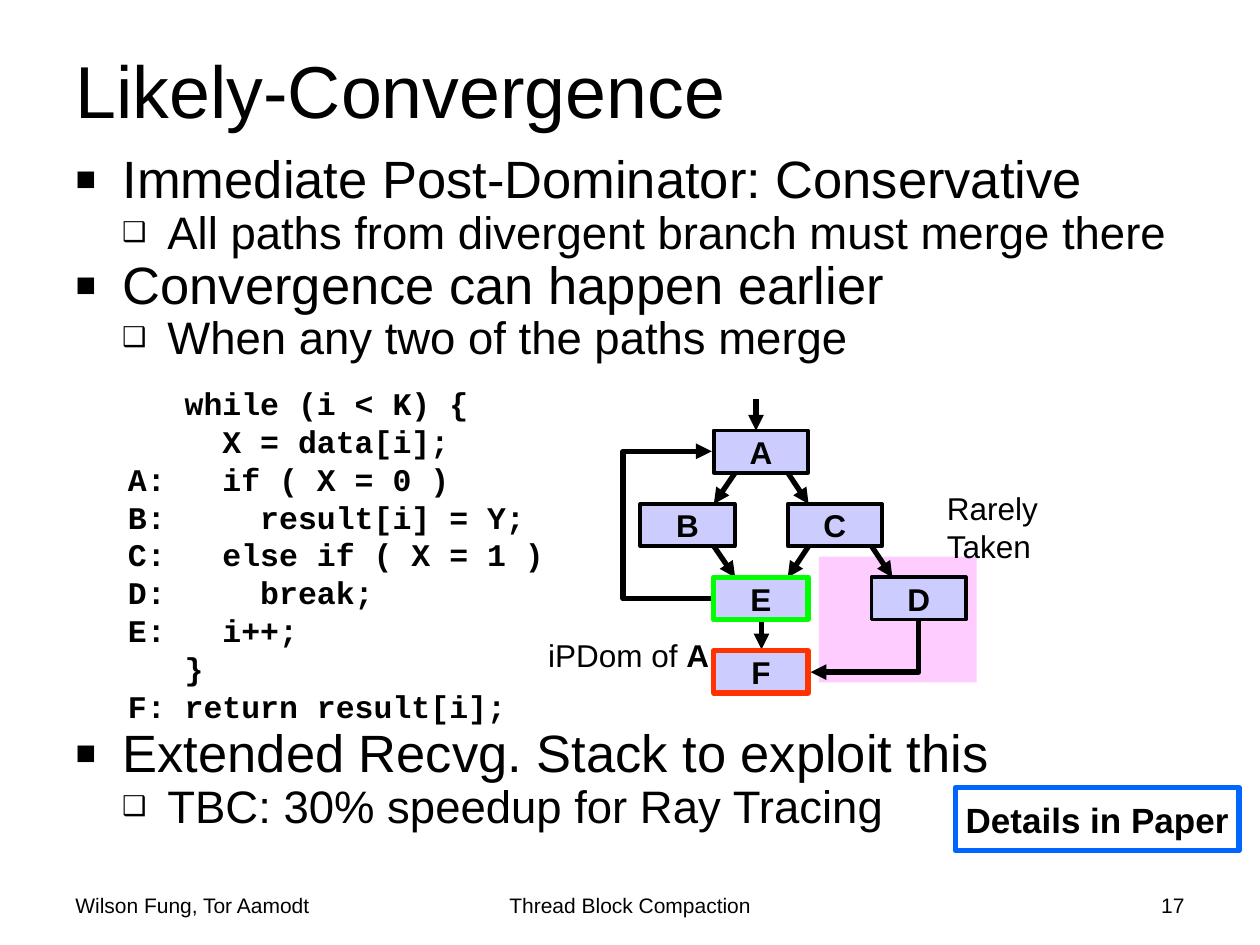
import pptx
import pptx.dml.color
import pptx.enum.shapes
import pptx.enum.text
import pptx.oxml
import pptx.oxml.ns
import pptx.util
from lxml import etree

Cm = pptx.util.Cm
Pt = pptx.util.Pt
ALIGN = pptx.enum.text.PP_ALIGN
ANCHOR = pptx.enum.text.MSO_ANCHOR
LINK = pptx.enum.shapes.MSO_CONNECTOR
qn = pptx.oxml.ns.qn

NODE_WIDTH, NODE_HEIGHT = 1.9, 0.85
ROWS = [8.68 + 1.48 * step for step in range(4)]
MIDDLE = 14.39
NODES = {
    "A": (MIDDLE, ROWS[0]), "B": (12.91, ROWS[1]), "C": (15.88, ROWS[1]),
    "D": (17.57, ROWS[2]), "E": (MIDDLE, ROWS[2]), "F": (MIDDLE, ROWS[3]),
}
ARROWS = [
    (14.82, 9.53, 14.39, 10.16), (15.88, 9.53, 16.3, 10.16),
    (16.3, 11.01, 15.88, 11.64), (17.57, 11.01, 17.99, 11.64),
    (14.39, 11.01, 14.82, 11.64),
    (15.24, 8.05, 15.24, 8.68), (15.35, 12.52, 15.35, 13.09),
]
BULLETS = [
    (0, "Immediate Post-Dominator: Conservative"),
    (1, "All paths from divergent branch must merge there"),
    (0, "Convergence can happen earlier"),
    (1, "When any two of the paths merge"),
    (0, "Extended Recvg. Stack to exploit this"),
    (1, "TBC: 30% speedup for Ray Tracing"),
]
# size, left margin, hanging indent, bullet, bullet size in percent
LEVELS = [(30, 0.95, 0.95, "■", 65), (26, 1.85, 0.91, "❑", 60)]
CODE = """   while (i < K) {
     X = data[i];
A:   if ( X = 0 )
B:     result[i] = Y;
C:   else if ( X = 1 )
D:     break;
E:   i++;
   }
F: return result[i];"""


def color(hex_string):
    return pptx.dml.color.RGBColor.from_string(hex_string)


class Slide:
    font = "Arial"
    ink = "000000"

    def __init__(self, page):
        self.page = page

    def style(self, para, size, bold=False, font=None):
        for span in para.runs:
            span.font.size = Pt(size)
            span.font.bold = bold
            span.font.name = font or self.font
            span.font.color.rgb = color(self.ink)

    def place(self, shape, area):
        shape.left, shape.top, shape.width, shape.height = map(Cm, area)

    def title(self, text, area):
        box = self.page.shapes.title
        self.place(box, area)
        frame = box.text_frame
        frame.text = text
        frame.auto_size = pptx.enum.text.MSO_AUTO_SIZE.NONE
        frame.vertical_anchor = ANCHOR.TOP
        frame.paragraphs[0].alignment = ALIGN.LEFT
        self.style(frame.paragraphs[0], 42)

    def body(self, items, area):
        box = self.page.placeholders[1]
        self.place(box, area)
        frame = box.text_frame
        frame.text = "\n".join(text for _, text in items)
        frame.auto_size = pptx.enum.text.MSO_AUTO_SIZE.NONE
        for para, (level, _) in zip(frame.paragraphs, items):
            size, margin, hanging, bullet, percent = LEVELS[level]
            para.level = level
            para.line_spacing = 0.9
            para.space_before = Pt(0)
            self.style(para, size)
            props = para._p.get_or_add_pPr()
            props.set("marL", str(Cm(margin)))
            props.set("indent", str(-Cm(hanging)))
            etree.SubElement(props, qn("a:buSzPct"), val=str(percent * 1000))
            etree.SubElement(props, qn("a:buFont"), typeface=self.font)
            etree.SubElement(props, qn("a:buChar"), char=bullet)
        return frame.paragraphs

    def text(self, text, area, size=18, align=ALIGN.LEFT, anchor=ANCHOR.TOP,
             bold=False, font=None, leading=None):
        box = self.page.shapes.add_textbox(*map(Cm, area))
        frame = box.text_frame
        frame.word_wrap = True
        frame.vertical_anchor = anchor
        frame.text = text
        for para in frame.paragraphs:
            para.alignment = align
            if leading:
                para.line_spacing = Pt(leading)
            self.style(para, size, bold, font)
        return frame.paragraphs

    def rect(self, area, fill=None, line=None, width=3, label="", size=18):
        kind = pptx.enum.shapes.MSO_SHAPE.RECTANGLE
        shape = self.page.shapes.add_shape(kind, *map(Cm, area))
        shape.shadow.inherit = False
        if fill:
            shape.fill.solid()
            shape.fill.fore_color.rgb = color(fill)
        else:
            shape.fill.background()
        if line:
            shape.line.color.rgb = color(line)
            shape.line.width = Pt(width)
        else:
            shape.line.fill.background()
        if label:
            frame = shape.text_frame
            frame.text = label
            frame.word_wrap = False
            frame.vertical_anchor = ANCHOR.MIDDLE
            frame.paragraphs[0].alignment = ALIGN.CENTER
            self.style(frame.paragraphs[0], size, bold=True)

    def arrow(self, ends, kind=LINK.STRAIGHT):
        link = self.page.shapes.add_connector(kind, *map(Cm, ends))
        link.line.color.rgb = color(self.ink)
        link.line.width = Pt(3)
        etree.SubElement(link.line._get_or_add_ln(), qn("a:tailEnd"), type="triangle")
        props = link._element.spPr
        etree.SubElement(props, qn("a:effectLst"))
        return props

    def loop_arrow(self, ends, reach):
        """Elbow that first runs sideways by reach before it turns back."""
        props = self.arrow(ends, LINK.ELBOW)
        ratio = round(reach / abs(ends[2] - ends[0]) * 100000)
        guides = props.find(qn("a:prstGeom")).get_or_add_avLst()
        etree.SubElement(guides, qn("a:gd"), name="adj1", fmla=f"val {ratio}")

    def down_left_arrow(self, x, y, end_x, end_y):
        """Single-bend elbow: a right-then-down bend turned by 90 degrees."""
        run, drop = x - end_x, end_y - y
        mid_x, mid_y = (x + end_x) / 2, (y + end_y) / 2
        props = self.arrow((mid_x - drop / 2, mid_y - run / 2,
                            mid_x + drop / 2, mid_y + run / 2), LINK.ELBOW)
        props.find(qn("a:prstGeom")).set("prst", "bentConnector2")
        props.find(qn("a:xfrm")).set("rot", str(90 * 60000))


def main():
    deck = pptx.Presentation()
    deck.slide_width, deck.slide_height = Cm(25.4), Cm(19.05)
    slide = Slide(deck.slides.add_slide(deck.slide_layouts[1]))

    slide.title("Likely-Convergence", (1.27, 0.78, 22.86, 3.18))
    bullets = slide.body(BULLETS, (1.27, 2.96, 22.86, 15.03))
    bullets[4].space_before = Pt(207)  # room for the code and the graph

    for text, left, width, align in [
            ("Wilson Fung, Tor Aamodt", 1.27, 5.93, ALIGN.LEFT),
            ("Thread Block Compaction", 8.68, 8.05, ALIGN.CENTER),
            ("17", 18.2, 5.93, ALIGN.RIGHT)]:
        slide.text(text, (left, 17.35, width, 1.27), 12, align, ANCHOR.BOTTOM)

    slide.rect((16.51, 11.22, 3.18, 2.54), fill="FFCCFF")
    slide.text("Rarely\nTaken", (18.84, 9.74, 3, 1.78), leading=21.6)
    slide.text(CODE, (2.33, 7.62, 9.53, 7.11), bold=True, font="Courier New",
               leading=21.6)

    for name, corner in NODES.items():
        slide.rect((*corner, NODE_WIDTH, NODE_HEIGHT), "CCCCFF", "000000", 2.25, name)
    for ends in ARROWS:
        slide.arrow(ends)
    slide.down_left_arrow(18.52, 12.52, 16.34, 13.55)
    slide.loop_arrow((14.36, 12.07, 14.35, 9.1), reach=1.8)

    for name, line in [("F", "FF3300"), ("E", "00FF00")]:
        slide.rect((*NODES[name], NODE_WIDTH, NODE_HEIGHT), line=line)
    caption = slide.text("iPDom of ", (10.8, 12.7, 4, 1.02), leading=21.6)[0]
    caption.add_run().text = "A"
    slide.style(caption, 18)
    caption.runs[1].font.bold = True

    slide.rect((19.26, 15.88, 5.72, 1.27), line="0066FF",
               label="Details in Paper", size=20)
    deck.save("out.pptx")


if __name__ == "__main__":
    main()
